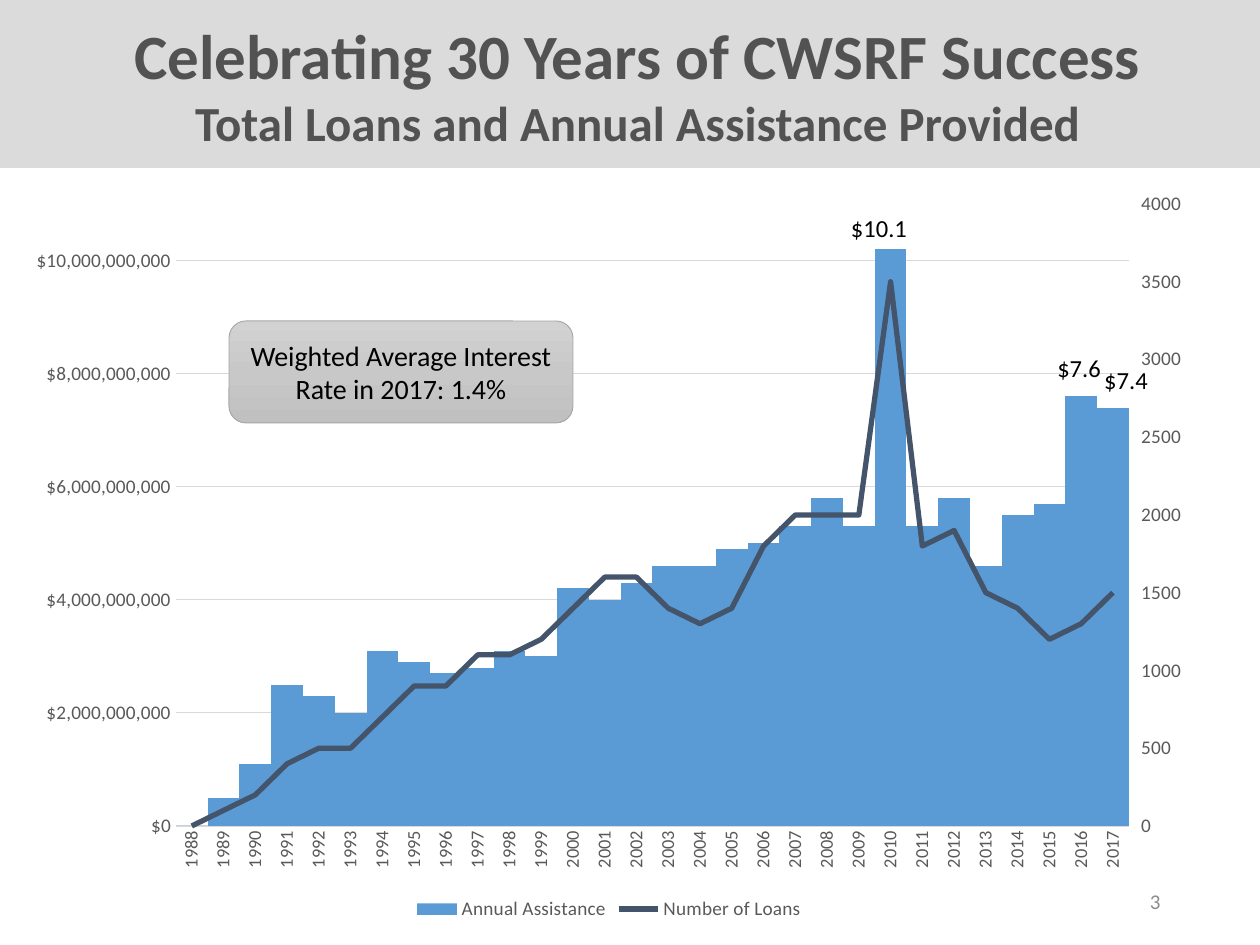
import pptx
import pptx.chart.axis
import pptx.chart.data
import pptx.dml.color
import pptx.enum.chart
import pptx.enum.shapes
import pptx.enum.text
import pptx.oxml
import pptx.oxml.ns
import pptx.util
import copy

EMU_PER_PX = 914400 / 126
FONT = "Calibri"
COLORS = {
    "band": "DBDBDB", "title": "525252", "text": "000000", "muted": "595959",
    "number": "8C8C8C", "grid": "D9D9D9", "bars": "5B9BD5", "line": "44546A",
    "box_top": "D2D2D2", "box_middle": "C8C8C8", "box_bottom": "C0C0C0", "box_line": "A5A5A5",
}
ALIGN = pptx.enum.text.PP_ALIGN
ANCHOR = pptx.enum.text.MSO_ANCHOR
SHAPE = pptx.enum.shapes.MSO_SHAPE
TICK = pptx.enum.chart.XL_TICK_MARK

YEARS = [str(year) for year in range(1988, 2018)]
ASSISTANCE_BILLIONS = [
    0, 0.5, 1.1, 2.5, 2.3, 2.0, 3.1, 2.9, 2.7, 2.8, 3.1, 3.0, 4.2, 4.0, 4.3,
    4.6, 4.6, 4.9, 5.0, 5.3, 5.8, 5.3, 10.2, 5.3, 5.8, 4.6, 5.5, 5.7, 7.6, 7.4]
LOANS = [
    0, 100, 200, 400, 500, 500, 700, 900, 900, 1100, 1100, 1200, 1400, 1600, 1600,
    1400, 1300, 1400, 1800, 2000, 2000, 2000, 3500, 1800, 1900, 1500, 1400, 1200, 1300, 1500]


def px(*lengths):
    return [round(length * EMU_PER_PX) for length in lengths]


def rgb(name):
    return pptx.dml.color.RGBColor.from_string(COLORS[name])


def style_font(font, size, color, bold=False):
    font.name, font.size, font.bold = FONT, pptx.util.Pt(size), bold
    font.color.rgb = rgb(color)


def write_text(paragraph, text, size=14, color="text", bold=False, align=ALIGN.CENTER, indent=0):
    paragraph.alignment = align
    if indent:
        paragraph._p.get_or_add_pPr().set("marL", str(px(indent)[0]))
    run = paragraph.add_run()
    run.text = text
    style_font(run.font, size, color, bold)


def chart_xml(content):
    return pptx.oxml.parse_xml(content.replace(">", f' {pptx.oxml.ns.nsdecls("c")}>', 1))


def find(element, tag):
    return element.find(pptx.oxml.ns.qn(tag))


def remove_children(element, tag):
    for child in element.findall(pptx.oxml.ns.qn(tag)):
        element.remove(child)


class SlideBuilder:
    def __init__(self, slide):
        self.slide = slide

    def label(self, box, text, anchor=ANCHOR.TOP, **style):
        shape = self.slide.shapes.add_textbox(*px(*box))
        shape.text_frame.word_wrap = True
        shape.text_frame.vertical_anchor = anchor
        write_text(shape.text_frame.paragraphs[0], text, **style)

    def panel(self, kind, box, lines):
        shape = self.slide.shapes.add_shape(kind, *px(*box))
        shape.shadow.inherit = False
        shape.line.fill.background()
        frame = shape.text_frame
        frame.word_wrap = True
        frame.vertical_anchor = ANCHOR.MIDDLE
        for index, (text, style) in enumerate(lines):
            paragraph = frame.add_paragraph() if index else frame.paragraphs[0]
            write_text(paragraph, text, **style)
        return shape

    def band(self, box, lines):
        shape = self.panel(SHAPE.RECTANGLE, box, lines)
        shape.fill.solid()
        shape.fill.fore_color.rgb = rgb("band")

    def callout(self, box, lines):
        shape = self.panel(SHAPE.ROUNDED_RECTANGLE, box, lines)
        shape.line.color.rgb = rgb("box_line")
        shape.line.width = pptx.util.Pt(0.5)
        shape.fill.gradient()
        shape.fill.gradient_angle = 270
        stops = find(find(shape._element.spPr, "a:gradFill"), "a:gsLst")
        stops.insert(1, copy.deepcopy(stops[0]))
        names = ("box_top", "box_middle", "box_bottom")
        for stop, name, position in zip(shape.fill.gradient_stops, names, (0, 0.5, 1)):
            stop.color.rgb = rgb(name)
            stop.position = position

    def combo_chart(self, box, plot_box):
        data = pptx.chart.data.CategoryChartData()
        data.categories = YEARS
        data.add_series("Annual Assistance", [round(value * 10**9) for value in ASSISTANCE_BILLIONS])
        data.add_series("Number of Loans", LOANS)
        kind = pptx.enum.chart.XL_CHART_TYPE.COLUMN_CLUSTERED
        chart = self.slide.shapes.add_chart(kind, *px(*box), data).chart
        style_font(chart.font, 10, "text")
        chart.has_title = False
        chart.has_legend = True
        chart.legend.position = pptx.enum.chart.XL_LEGEND_POSITION.BOTTOM
        chart.legend.include_in_layout = False
        style_font(chart.legend.font, 11, "muted")
        self.style_axes(chart)
        self.move_loans_to_line(chart)
        self.style_series(chart)
        self.set_plot_area(chart, box, plot_box)

    def style_axes(self, chart):
        years, dollars = chart.category_axis, chart.value_axis
        style_font(years.tick_labels.font, 10.5, "muted")
        find(find(years._element, "c:txPr"), "a:bodyPr").set("rot", "-5400000")
        years.format.line.color.rgb = rgb("grid")
        years.format.line.width = pptx.util.Pt(0.75)
        style_font(dollars.tick_labels.font, 11, "muted")
        dollars.tick_labels.number_format = '"$"#,##0'
        dollars.tick_labels.number_format_is_linked = False
        dollars.minimum_scale, dollars.maximum_scale = 0, 11 * 10**9
        dollars.major_unit = 2 * 10**9
        dollars.format.line.fill.background()
        dollars.major_gridlines.format.line.color.rgb = rgb("grid")
        dollars.major_gridlines.format.line.width = pptx.util.Pt(0.75)
        for axis in (years, dollars):
            axis.major_tick_mark = axis.minor_tick_mark = TICK.NONE

    def move_loans_to_line(self, chart):
        plot_area = chart._chartSpace.chart.plotArea
        bars = find(plot_area, "c:barChart")
        loans = bars.findall(pptx.oxml.ns.qn("c:ser"))[1]
        remove_children(loans, "c:invertIfNegative")
        lines = chart_xml(
            '<c:lineChart><c:grouping val="standard"/><c:varyColors val="0"/>'
            '<c:marker val="1"/><c:axId val="5001"/><c:axId val="5002"/></c:lineChart>')
        lines.insert(2, loans)
        bars.addnext(lines)
        hidden_years = chart_xml(
            '<c:catAx><c:axId val="5001"/><c:scaling><c:orientation val="minMax"/></c:scaling>'
            '<c:delete val="1"/><c:axPos val="b"/><c:crossAx val="5002"/>'
            '<c:crosses val="autoZero"/></c:catAx>')
        right_axis = chart_xml(
            '<c:valAx><c:axId val="5002"/><c:scaling><c:orientation val="minMax"/></c:scaling>'
            '<c:delete val="0"/><c:axPos val="r"/><c:numFmt formatCode="General" sourceLinked="0"/>'
            '<c:majorTickMark val="out"/><c:minorTickMark val="none"/><c:tickLblPos val="nextTo"/>'
            '<c:crossAx val="5001"/><c:crosses val="max"/></c:valAx>')
        chart.value_axis._element.addnext(right_axis)
        right_axis.addnext(hidden_years)
        axis = pptx.chart.axis.ValueAxis(right_axis)
        style_font(axis.tick_labels.font, 11, "muted")
        axis.format.line.fill.background()
        axis.minimum_scale, axis.maximum_scale, axis.major_unit = 0, 4000, 500

    def style_series(self, chart):
        bars, lines = chart.plots
        bars.gap_width = 0
        bars.vary_by_categories = False
        bars.series[0].format.fill.solid()
        bars.series[0].format.fill.fore_color.rgb = rgb("bars")
        loans = lines.series[0]
        loans.smooth = False
        loans.marker.style = pptx.enum.chart.XL_MARKER_STYLE.NONE
        loans.format.line.color.rgb = rgb("line")
        loans.format.line.width = pptx.util.Pt(3)

    def set_plot_area(self, chart, box, plot_box):
        left, top, width, height = box
        x, y, w, h = plot_box
        shares = {"x": (x - left) / width, "y": (y - top) / height, "w": w / width, "h": h / height}
        values = "".join(f'<c:{name} val="{share:.4f}"/>' for name, share in shares.items())
        plot_area = chart._chartSpace.chart.plotArea
        remove_children(plot_area, "c:layout")
        plot_area.insert(0, chart_xml(
            '<c:layout><c:manualLayout><c:layoutTarget val="inner"/><c:xMode val="edge"/>'
            f'<c:yMode val="edge"/>{values}</c:manualLayout></c:layout>'))


def main():
    presentation = pptx.Presentation()
    presentation.slide_width, presentation.slide_height = px(1260, 945)
    builder = SlideBuilder(presentation.slides.add_slide(presentation.slide_layouts[6]))
    builder.label((890, 876, 283, 50), "3", ANCHOR.MIDDLE, size=12, color="number", align=ALIGN.RIGHT)
    title = {"color": "title", "bold": True, "indent": 15}
    builder.band((0, 0, 1260, 168), [("Celebrating 30 Years of CWSRF Success", {"size": 36, **title}),
                                     ("Total Loans and Annual Assistance Provided", {"size": 28, **title})])
    builder.combo_chart((13, 178, 1192, 748), (176, 204, 953, 622))
    for text, box in (("$10.1", (833, 207, 92, 43)),
                      ("$7.6", (1043, 347, 72, 43)),
                      ("$7.4", (1090, 359, 72, 43))):
        builder.label(box, text)
    builder.callout((229, 321, 344, 102), [("Weighted Average Interest Rate in 2017: 1.4%", {"size": 16})])
    presentation.save("out.pptx")


if __name__ == "__main__":
    main()
